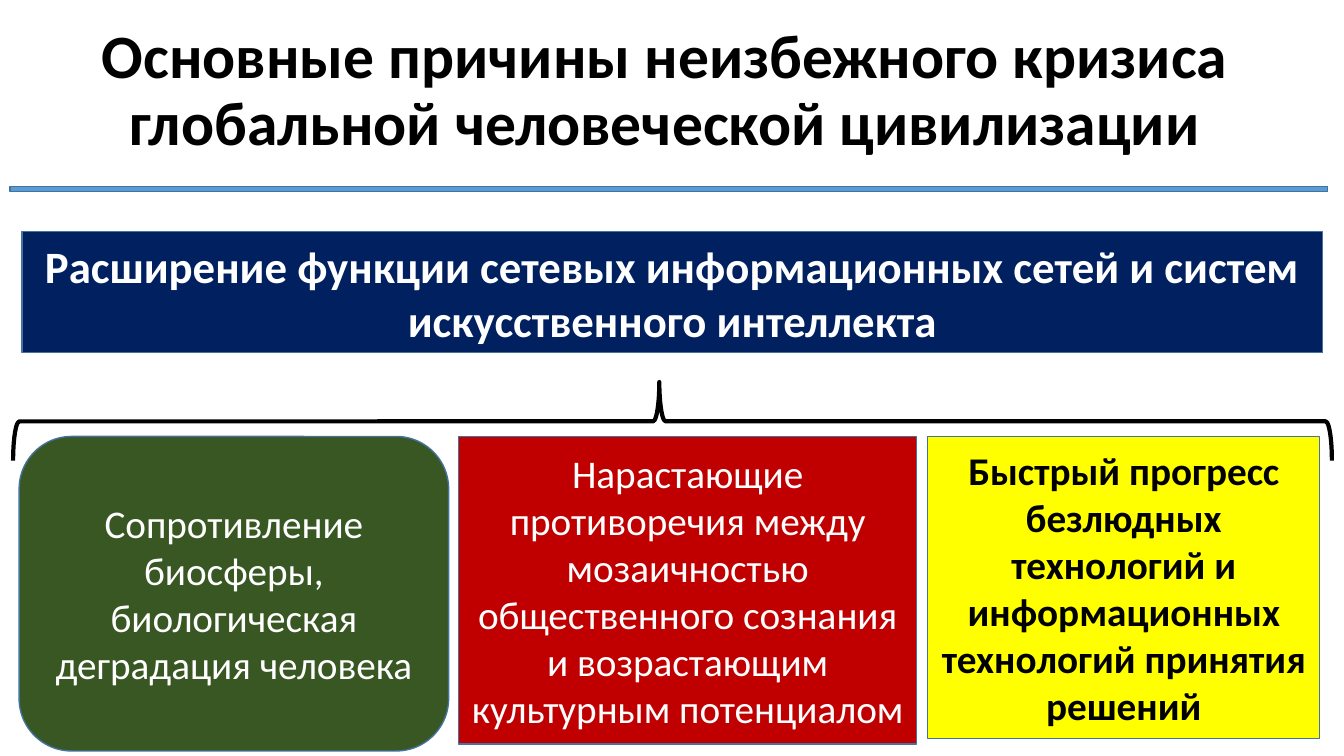
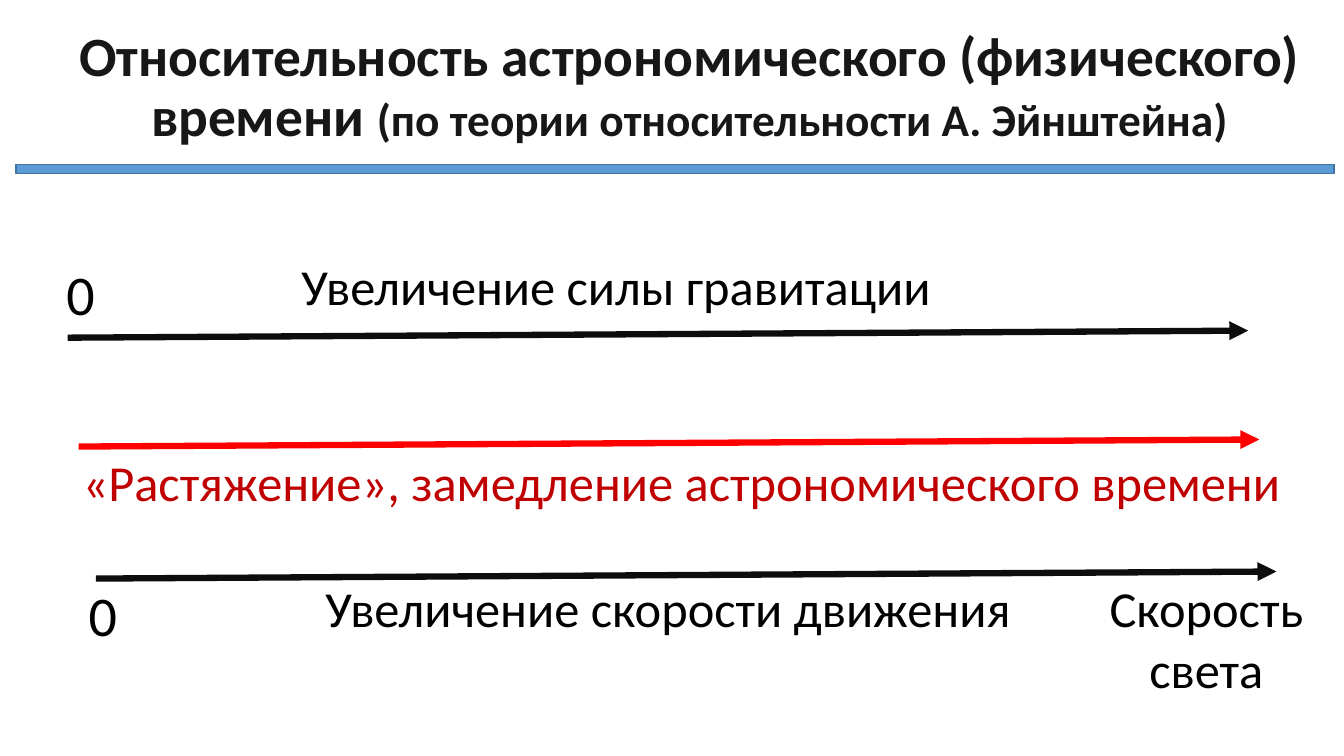
from dataclasses import dataclass

from lxml import etree
from pptx import Presentation
from pptx.dml.color import RGBColor
from pptx.enum.shapes import MSO_CONNECTOR, MSO_SHAPE
from pptx.enum.text import MSO_ANCHOR, MSO_AUTO_SIZE, PP_ALIGN
from pptx.oxml.ns import qn
from pptx.util import Inches, Pt

RECT = MSO_SHAPE.RECTANGLE
ROUND = MSO_SHAPE.ROUNDED_RECTANGLE
BRACE = MSO_SHAPE.LEFT_BRACE
STRAIGHT = MSO_CONNECTOR.STRAIGHT
MIDDLE = MSO_ANCHOR.MIDDLE
TOP = MSO_ANCHOR.TOP
CENTER = PP_ALIGN.CENTER
LEFT = PP_ALIGN.LEFT
GROW = MSO_AUTO_SIZE.SHAPE_TO_FIT_TEXT
FIXED = MSO_AUTO_SIZE.NONE

FONT = "Calibri"
COLORS = {
    "black": "000000",
    "ink": "181717",
    "arrow": "0D0D0D",
    "white": "FFFFFF",
    "band": "5B9BD5",
    "edge": "43739E",
    "navy": "002060",
    "green": "385723",
    "crimson": "C00000",
    "yellow": "FFFF00",
    "red": "FF0000",
}
BAND_LEN = 13.07
ARROW_LEN = 11.71
ARROW_RISE = 0.07
CARD_TOP = 4.33


@dataclass
class Run:
    text: str
    size: float
    color: str = "black"
    bold: bool = False


@dataclass
class Box:
    x: float
    y: float
    w: float
    h: float


@dataclass
class Card:
    box: Box
    fill: str
    run: Run
    kind: int = RECT


@dataclass
class Label:
    box: Box
    run: Run
    wrap: bool = False


@dataclass
class Arrow:
    x: float
    y: float
    color: str = "arrow"


CARDS = [
    Card(Box(0.22, 2.3, 12.9, 1.2), "navy",
         Run("Расширение функции сетевых информационных сетей и систем "
             "искусственного интеллекта", 32, "white", True)),
    Card(Box(0.19, CARD_TOP, 4.26, 3.12), "green",
         Run("Сопротивление биосферы, биологическая деградация человека",
             28, "white"), ROUND),
    Card(Box(4.55, CARD_TOP, 4.54, 3.05), "crimson",
         Run("Нарастающие противоречия между мозаичностью общественного "
             "сознания и возрастающим культурным потенциалом", 28, "white")),
    Card(Box(9.2, CARD_TOP, 3.89, 3), "yellow",
         Run("Быстрый прогресс безлюдных технологий и информационных "
             "технологий принятия решений", 28, bold=True)),
]
ARROWS = [Arrow(0.67, 3.35), Arrow(0.78, 4.43, "red"), Arrow(0.95, 5.74)]
LABELS = [
    Label(Box(0.56, 2.53, 0.49, 0.77), Run("0", 40)),
    Label(Box(2.89, 2.48, 6.51, 0.71), Run("Увеличение силы гравитации", 36)),
    Label(Box(0.72, 4.43, 12.21, 0.71),
          Run("«Растяжение», замедление астрономического времени",
              36, "crimson")),
    Label(Box(0.78, 5.71, 0.49, 0.77), Run("0", 40)),
    Label(Box(3.13, 5.68, 7.07, 0.71),
          Run("Увеличение скорости движения", 36)),
    Label(Box(10.81, 5.68, 2.31, 1.31), Run("Скорость света", 36), True),
]


def color(name: str) -> RGBColor:
    return RGBColor.from_string(COLORS[name])


def place(box: Box) -> list:
    return [Inches(v) for v in (box.x, box.y, box.w, box.h)]


def apply(target, values: dict) -> None:
    for name, value in values.items():
        setattr(target, name, value)


def write(frame, runs: list[Run], form: dict, align: int) -> None:
    apply(frame, form)
    para = frame.paragraphs[0]
    para.alignment = align
    for item in runs:
        run = para.add_run()
        run.text = item.text
        apply(run.font, {"name": FONT, "size": Pt(item.size),
                         "bold": item.bold})
        run.font.color.rgb = color(item.color)


def add_block(slide, kind: int, box: Box, fill: str | None,
              edge: str = "edge", width: float = 1):
    shape = slide.shapes.add_shape(kind, *place(box))
    shape.shadow.inherit = False
    if fill:
        shape.fill.solid()
        shape.fill.fore_color.rgb = color(fill)
    else:
        shape.fill.background()
    shape.line.color.rgb = color(edge)
    shape.line.width = Pt(width)
    return shape


def add_page(deck, box: Box, runs: list[Run], band: Box):
    slide = deck.slides.add_slide(deck.slide_layouts[5])
    title = slide.shapes.title
    sides = zip(("left", "top", "width", "height"), place(box))
    apply(title, dict(sides))
    form = {"word_wrap": True, "auto_size": FIXED, "vertical_anchor": MIDDLE}
    write(title.text_frame, runs, form, CENTER)
    title.text_frame.paragraphs[0].line_spacing = 0.9
    add_block(slide, RECT, band, "band")
    return slide


def add_card(slide, card: Card) -> None:
    shape = add_block(slide, card.kind, card.box, card.fill)
    form = {"word_wrap": True, "vertical_anchor": MIDDLE}
    write(shape.text_frame, [card.run], form, CENTER)


def add_label(slide, label: Label) -> None:
    text = slide.shapes.add_textbox(*place(label.box))
    form = {"word_wrap": label.wrap, "auto_size": GROW,
            "vertical_anchor": TOP}
    write(text.text_frame, [label.run], form, CENTER if label.wrap else LEFT)


def add_arrow(slide, arrow: Arrow) -> None:
    ends = (arrow.x, arrow.y, arrow.x + ARROW_LEN, arrow.y - ARROW_RISE)
    line = slide.shapes.add_connector(STRAIGHT, *[Inches(v) for v in ends])
    line.line.color.rgb = color(arrow.color)
    line.line.width = Pt(4.5)
    tip = etree.SubElement(line.line._get_or_add_ln(), qn("a:tailEnd"))
    tip.set("type", "triangle")
    etree.SubElement(line._element.spPr, qn("a:effectLst"))


def add_causes(deck) -> None:
    head = Run("Основные причины неизбежного кризиса глобальной "
               "человеческой цивилизации", 44, bold=True)
    slide = add_page(deck, Box(0, 0.19, 13.2, 1.45), [head],
                     Box(0.1, 1.85, BAND_LEN, 0.05))
    for card in CARDS:
        add_card(slide, card)
    brace = add_block(slide, BRACE, Box(6.28, -2.36, 0.78, 13.08), None,
                      "black", 3)
    brace.rotation = 90
    brace.adjustments[0] = 0.08
    brace.adjustments[1] = 0.51


def add_time(deck) -> None:
    head = [
        Run("Относительность астрономического (физического) времени ",
            39.6, "ink", True),
        Run("(по теории относительности А. Эйнштейна)", 32.4, "ink", True),
    ]
    slide = add_page(deck, Box(0.56, 0.23, 12.56, 1.29), head,
                     Box(0.16, 1.63, BAND_LEN, 0.09))
    for arrow in ARROWS:
        add_arrow(slide, arrow)
    for label in LABELS:
        add_label(slide, label)


def main() -> None:
    deck = Presentation()
    deck.slide_width = Inches(13.33)
    deck.slide_height = Inches(7.5)
    add_causes(deck)
    add_time(deck)
    deck.save("out.pptx")


if __name__ == "__main__":
    main()
